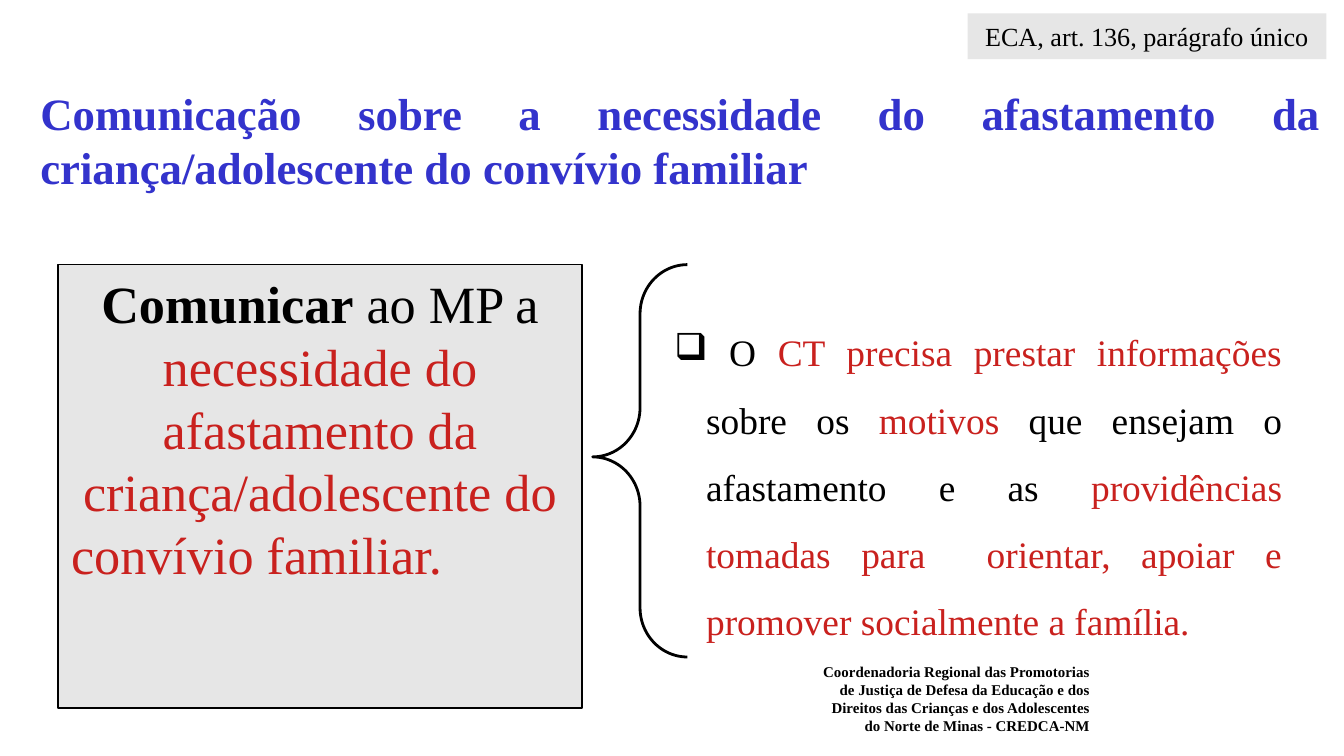
from dataclasses import dataclass

from lxml import etree
from pptx import Presentation
from pptx.dml.color import RGBColor
from pptx.enum.shapes import MSO_SHAPE
from pptx.enum.text import MSO_ANCHOR, MSO_AUTO_SIZE, PP_ALIGN
from pptx.oxml.ns import qn
from pptx.util import Pt

RECTANGLE, LEFT_BRACE = MSO_SHAPE.RECTANGLE, MSO_SHAPE.LEFT_BRACE
LEFT, CENTER = PP_ALIGN.LEFT, PP_ALIGN.CENTER
RIGHT, JUSTIFY = PP_ALIGN.RIGHT, PP_ALIGN.JUSTIFY
TOP, NO_AUTOFIT = MSO_ANCHOR.TOP, MSO_AUTO_SIZE.NONE

FONT = "Times New Roman"
COLORS = {"black": "000000", "red": "C9211E", "blue": "3333CC", "gray": "E6E6E6"}


@dataclass
class Run:
    text: str
    color: str = "black"
    bold: bool = False


@dataclass
class Para:
    runs: list[Run]
    align: PP_ALIGN
    bullet: str = ""
    spacing: float = 1.0


@dataclass
class Block:
    left: float
    top: float
    width: float
    height: float
    size: float
    paras: list[Para]
    fill: str = ""
    outline: float = 0


def rgb(name: str) -> RGBColor:
    return RGBColor.from_string(COLORS[name])


def add_bullet(p, char: str, indent: float) -> None:
    pPr = p._p.get_or_add_pPr()
    pPr.set("marL", str(Pt(indent)))
    pPr.set("indent", str(-Pt(indent)))
    color = etree.SubElement(pPr, qn("a:buClr"))
    etree.SubElement(color, qn("a:srgbClr"), val=COLORS["black"])
    etree.SubElement(pPr, qn("a:buChar"), char=char)


def write_text(s, block: Block) -> None:
    tf = s.text_frame
    tf.word_wrap = True
    tf.auto_size = NO_AUTOFIT
    tf.vertical_anchor = TOP
    for i, para in enumerate(block.paras):
        p = tf.add_paragraph() if i else tf.paragraphs[0]
        p.alignment = para.align
        p.line_spacing = para.spacing
        if para.bullet:
            add_bullet(p, para.bullet, 17)
        for run in para.runs:
            r = p.add_run()
            r.text = run.text
            r.font.name = FONT
            r.font.size = Pt(block.size)
            r.font.bold = run.bold
            r.font.color.rgb = rgb(run.color)


def place(s, block: Block) -> None:
    s.left, s.top = Pt(block.left), Pt(block.top)
    s.width, s.height = Pt(block.width), Pt(block.height)


def draw_block(slide, block: Block) -> None:
    box = [Pt(v) for v in (block.left, block.top, block.width, block.height)]
    if block.fill:
        s = slide.shapes.add_shape(RECTANGLE, *box)
        s.shadow.inherit = False
        s.fill.solid()
        s.fill.fore_color.rgb = rgb(block.fill)
        if block.outline:
            s.line.color.rgb = rgb("black")
            s.line.width = Pt(block.outline)
        else:
            s.line.fill.background()
    else:
        s = slide.shapes.add_textbox(*box)
    write_text(s, block)


def draw_brace(slide, left: float, top: float, width: float, height: float) -> None:
    s = slide.shapes.add_shape(LEFT_BRACE, Pt(left), Pt(top), Pt(width), Pt(height))
    s.shadow.inherit = False
    s.fill.background()
    s.line.color.rgb = rgb("black")
    s.line.width = Pt(1.5)
    s.adjustments[0] = 0.52
    s.adjustments[1] = 0.49


TITLE = Block(14.4, 42.5, 699.8, 65, 24, [Para([Run(
    "Comunicação sobre a necessidade do afastamento da "
    "criança/adolescente do convívio familiar", "blue", True)], JUSTIFY)])

FOOTER = Block(433.4, 351.4, 157.7, 55, 8, [Para([Run(
    "Coordenadoria Regional das Promotorias de Justiça de Defesa da Educação "
    "e dos Direitos das Crianças e dos Adolescentes do Norte de Minas - CREDCA-NM",
    bold=True)], RIGHT)])

DUTY = Block(31, 141.8, 280.8, 237.6, 28, [
    Para([Run("Comunicar", bold=True), Run(" ao MP a "),
          Run("necessidade do afastamento da criança/adolescente do", "red")], CENTER),
    Para([Run("convívio familiar.", "red")], LEFT),
], fill="gray", outline=0.75)

DETAILS = Block(354.2, 161, 339.8, 176, 20, [Para([
    Run(" O "),
    Run("CT precisa prestar informações", "red"),
    Run(" sobre os "),
    Run("motivos", "red"),
    Run(" que ensejam o afastamento e as "),
    Run("providências tomadas para  orientar, apoiar e promover "
        "socialmente a família.", "red"),
], JUSTIFY, bullet="❑", spacing=1.5)])

LAW = Block(518.4, 7.2, 192.2, 24.5, 14,
            [Para([Run("ECA, art. 136, parágrafo único")], CENTER)], fill="gray")


def main() -> None:
    prs = Presentation()
    prs.slide_width, prs.slide_height = Pt(720), Pt(405)
    slide = prs.slides.add_slide(prs.slide_layouts[5])
    place(slide.shapes.title, TITLE)
    write_text(slide.shapes.title, TITLE)
    for block in (FOOTER, DUTY, DETAILS, LAW):
        draw_block(slide, block)
    draw_brace(slide, 317.5, 141.8, 50.8, 210.2)
    prs.save("out.pptx")


if __name__ == "__main__":
    main()
